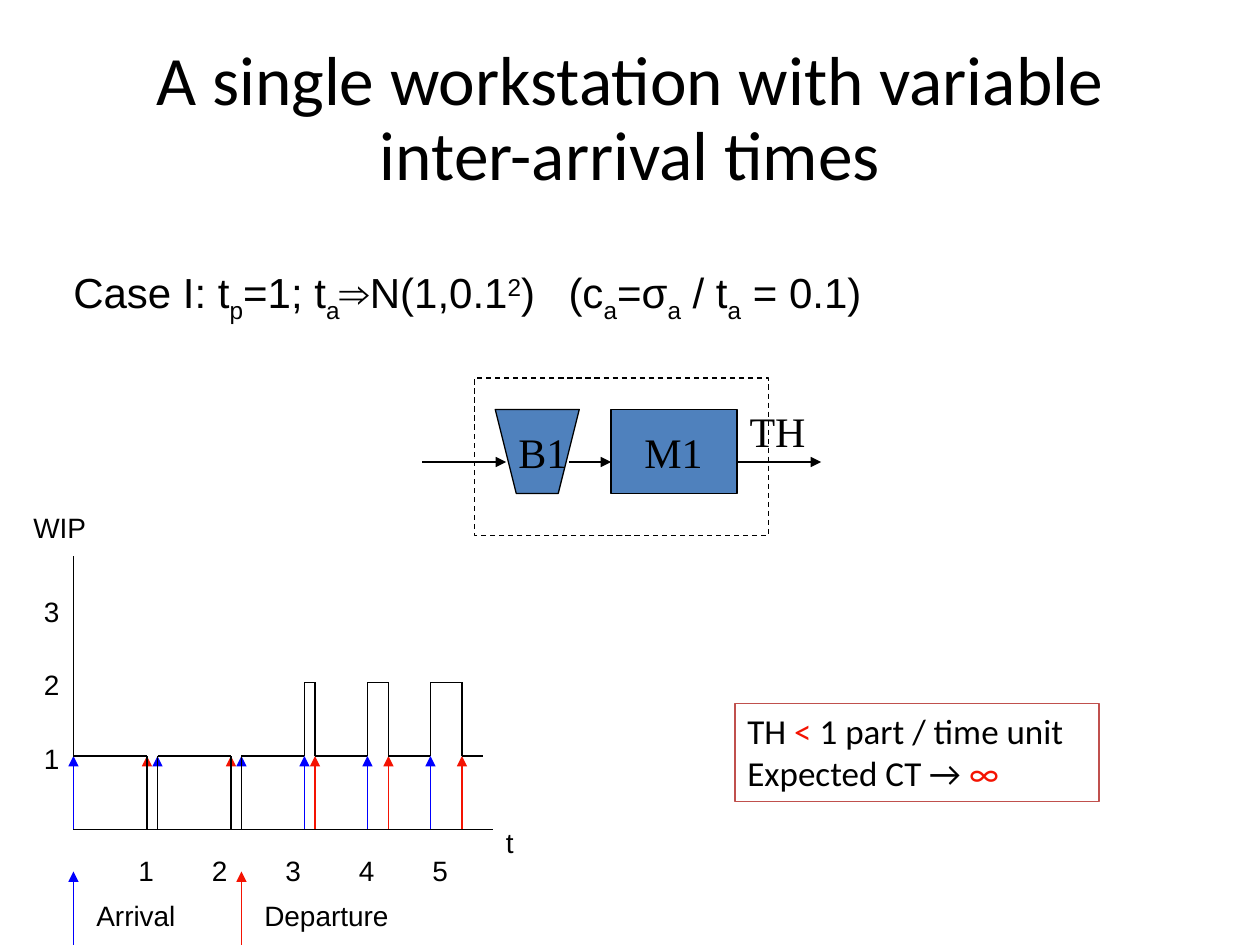
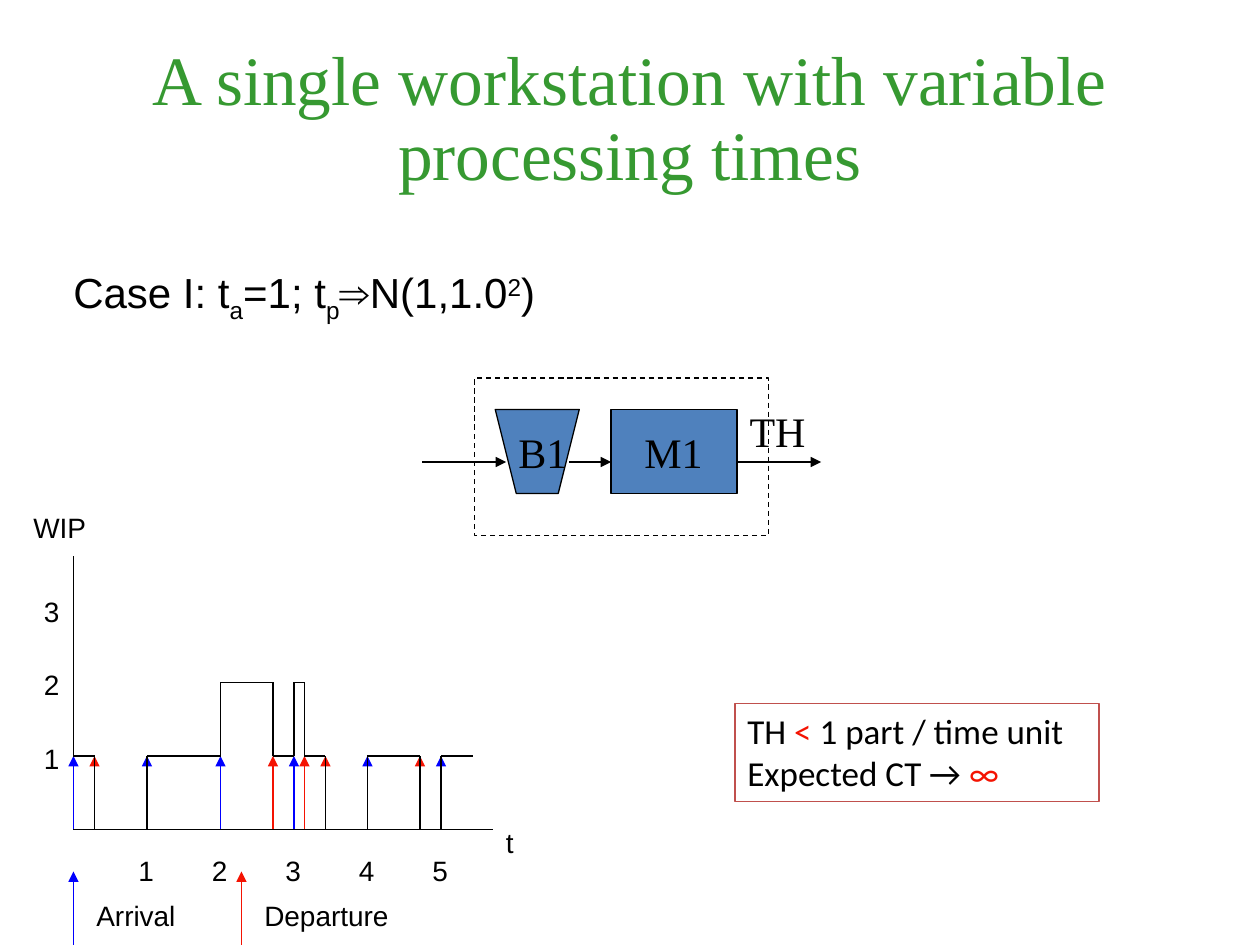
from dataclasses import dataclass

from lxml import etree
from pptx import Presentation
from pptx.dml.color import RGBColor
from pptx.enum.dml import MSO_LINE
from pptx.enum.shapes import MSO_CONNECTOR, MSO_SHAPE
from pptx.enum.text import MSO_ANCHOR, PP_ALIGN
from pptx.oxml.ns import qn
from pptx.util import Pt

DASH = MSO_LINE.DASH
STRAIGHT = MSO_CONNECTOR.STRAIGHT
RECT = MSO_SHAPE.RECTANGLE
TOP, MIDDLE = MSO_ANCHOR.TOP, MSO_ANCHOR.MIDDLE
LEFT, CENTER = PP_ALIGN.LEFT, PP_ALIGN.CENTER


@dataclass(frozen=True)
class Theme:
    ink: str = "000000"
    green: str = "369931"
    blue: str = "0000FF"
    red: str = "F41302"
    steel: str = "4F81BD"
    rust: str = "C0504D"
    sans: str = "Arial"
    serif: str = "Times New Roman"
    plain: str = "Calibri"
    head: float = 39.6
    body: float = 24
    note: float = 20
    label: float = 16
    rule: float = 0.75


T = Theme()
BASE = {"_": "-25000", "^": "30000"}
STEP = 42
UNIT = 6


def put_text(frame, text, font=T.sans, size=T.label, color=T.ink, align=LEFT,
             anchor=TOP, wrap=False, space=None, tab=None):
    """Split runs at |; a leading _ lowers, ^ raises and ! reddens a run."""
    frame.word_wrap = wrap
    frame.vertical_anchor = anchor
    for i, line in enumerate(text.split("\n")):
        para = frame.add_paragraph() if i else frame.paragraphs[0]
        para.alignment = align
        if space:
            para.line_spacing = space
        if tab:
            stops = etree.SubElement(para._p.get_or_add_pPr(), qn("a:tabLst"))
            etree.SubElement(stops, qn("a:tab"), pos=str(Pt(tab)), algn="l")
        for part in line.split("|"):
            mark = part[0] if part[0] in "_^!" else ""
            run = para.add_run()
            run.text = part[len(mark):]
            run.font.name = font
            run.font.size = Pt(size)
            run.font.color.rgb = RGBColor.from_string(T.red if mark == "!" else color)
            if mark in BASE:
                run._r.get_or_add_rPr().set("baseline", BASE[mark])


def add_text(slide, box, text, **form):
    shape = slide.shapes.add_textbox(*map(Pt, box))
    put_text(shape.text_frame, text, **form)


def paint(shape, fill=None, line=T.ink, dash=None):
    shape.shadow.inherit = False
    if fill:
        shape.fill.solid()
        shape.fill.fore_color.rgb = RGBColor.from_string(fill)
    else:
        shape.fill.background()
    shape.line.color.rgb = RGBColor.from_string(line)
    shape.line.width = Pt(T.rule)
    if dash:
        shape.line.dash_style = dash


def add_rect(slide, box, **look):
    shape = slide.shapes.add_shape(RECT, *map(Pt, box))
    paint(shape, **look)
    return shape


def add_line(slide, start, end, color=T.ink, arrow=False):
    line = slide.shapes.add_connector(STRAIGHT, *map(Pt, start + end))
    line.line.color.rgb = RGBColor.from_string(color)
    line.line.width = Pt(T.rule)
    if arrow:
        etree.SubElement(line.line._get_or_add_ln(), qn("a:tailEnd"), type="triangle")
    etree.SubElement(line._element.spPr, qn("a:effectLst"))


def draw_flow(slide, box):
    x, y, wide, high = box
    add_rect(slide, (x + 78, y + 18, 72, 48), fill=T.steel)
    pen = slide.shapes.build_freeform(x + 12, y + 18, scale=Pt(1))
    pen.add_line_segments([(x + 24, y + 66), (x + 48, y + 66), (x + 60, y + 18)])
    paint(pen.convert_to_shape(), fill=T.steel)
    add_rect(slide, box, dash=DASH)
    for start, end in ((-30, 18), (54, 78), (150, wide + 30)):
        add_line(slide, (x + start, y + 48), (x + end, y + 48), arrow=True)
    for name, left, top, width in (("TH", 150, 12, 46.8), ("B1", 18, 24, 42.5),
                                   ("M1", 90, 24, 47.5)):
        add_text(slide, (x + left, y + top, width, 36), name,
                 font=T.serif, size=T.body)


def draw_trace(slide, x, base, arrive, depart, stop):
    events = sorted([(t, 1) for t in arrive] + [(t, -1) for t in depart])
    times = [t for t, _ in events[1:]] + [stop]
    level = 0
    for (now, change), then in zip(events, times):
        left, right = x + now * UNIT, x + then * UNIT
        old, level = base - level * STEP, level + change
        new = base - level * STEP
        if now:
            add_line(slide, (left, old), (left, new))
        if level:
            add_line(slide, (left, new), (right, new))


def draw_plot(slide, box, arrive, depart, stop):
    x, y, wide, high = box
    base = y + high
    add_line(slide, (x, base), (x + wide, base))
    add_line(slide, (x, base), (x, y))
    add_text(slide, (x - 30, y - 30, 45, 26.5), "WIP")
    add_text(slide, (x + wide, base - 6, 24, 26.5), "t", wrap=True)
    for i in range(5):
        add_text(slide, (x + 30 + i * STEP, base + 10, 24, 26.5), str(i + 1), wrap=True)
    for i in range(3):
        add_text(slide, (x - 24, base - 54 - i * STEP, 24, 26.5), str(i + 1), wrap=True)
    for times, color in ((arrive, T.blue), (depart, T.red)):
        for t in times:
            left = x + t * UNIT
            add_line(slide, (left, base), (left, base - STEP), color, True)
    draw_trace(slide, x, base, arrive, depart, stop)


def draw_key(slide, box):
    x, y, wide, high = box
    for i, (name, color, width) in enumerate((("Arrival", T.blue, 60),
                                              ("Departure", T.red, 86))):
        left = x + i * wide / 2
        add_line(slide, (left, y + high), (left, y), color, True)
        add_text(slide, (left + 6, y + 12, width, 26.5), name)


def draw_note(slide, box):
    note = add_rect(slide, box, line=T.rust)
    put_text(note.text_frame, "TH |!<| 1 part / time unit\nExpected CT →|! ∞",
             font=T.plain, size=T.note, wrap=True)


def draw_slide(deck, title, font, color, case, width, arrive, depart, stop):
    slide = deck.slides.add_slide(deck.slide_layouts[6])
    add_text(slide, (54, 24, 612, 90), title, font=font, size=T.head, color=color,
             align=CENTER, anchor=MIDDLE, wrap=True, space=0.9)
    draw_flow(slide, (271.2, 216, 168, 90))
    add_text(slide, (34.8, 149, width, 36), case, size=T.body, tab=283)
    draw_plot(slide, (42, 318, 240, 156), arrive, depart, stop)
    draw_key(slide, (42, 498, 192, 42))
    draw_note(slide, (420, 402, 208, 56))


def main():
    deck = Presentation()
    deck.slide_width, deck.slide_height = Pt(720), Pt(540)
    draw_slide(deck, "A single workstation with variable inter-arrival times",
               T.plain, T.ink,
               "Case I: t|_p|=1; t|_a|⇒N(1,0.1|^2|)\t(c|_a|=σ|_a| / t|_a| = 0.1)", 479,
               (0, 8, 16, 22, 28, 34), (7, 15, 23, 30, 37), 39)
    draw_slide(deck, "A single workstation with variable processing times",
               T.serif, T.green,
               "Case I: t|_a|=1; t|_p|⇒N(1,1.0|^2|)", 288,
               (0, 7, 14, 21, 28, 35), (2, 19, 22, 24, 33), 38)
    deck.save("out.pptx")


if __name__ == "__main__":
    main()
